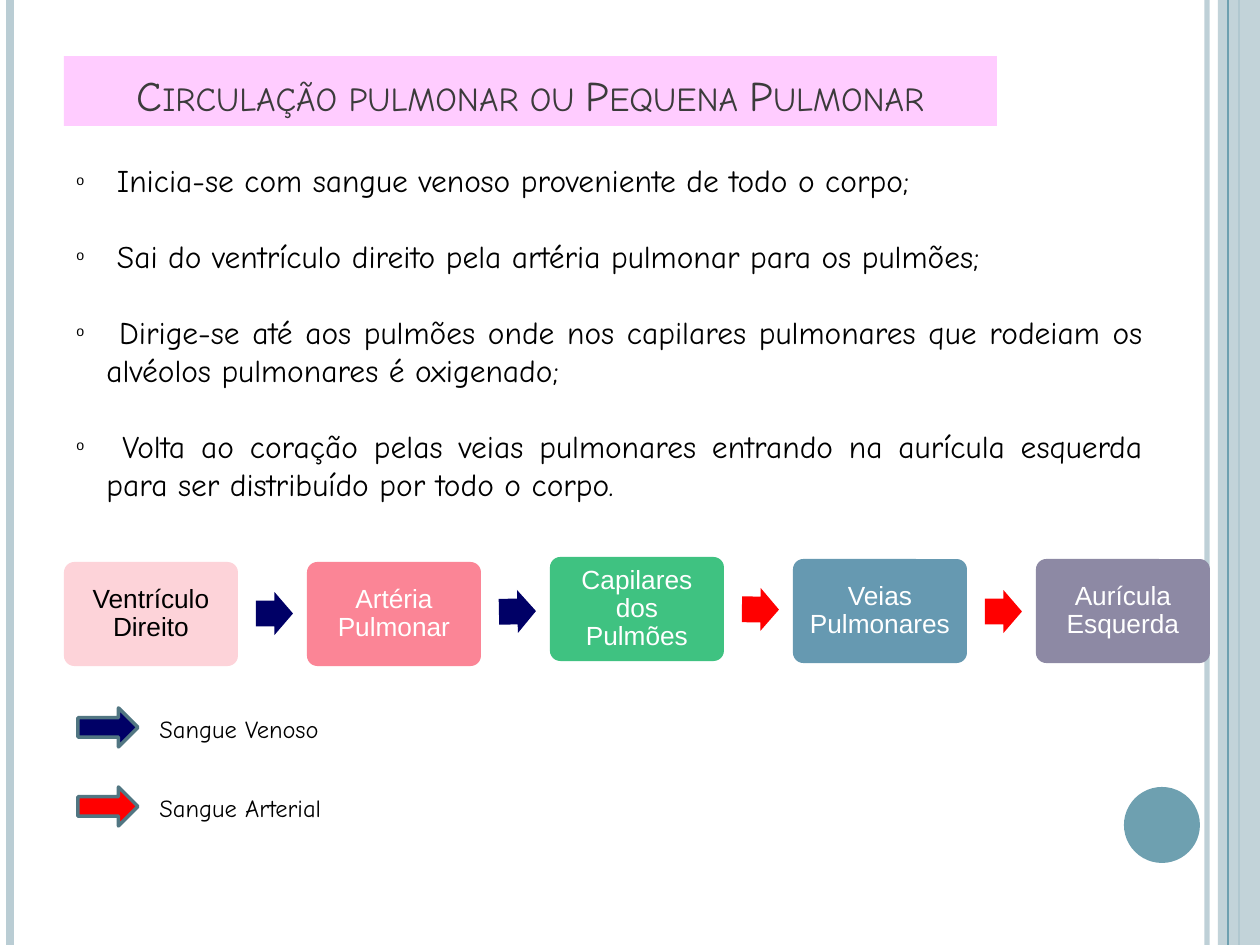
import math
from typing import NamedTuple

import lxml.etree
import pptx
import pptx.dml.color
import pptx.enum.shapes
import pptx.enum.text
import pptx.oxml.ns
import pptx.util

RGBColor = pptx.dml.color.RGBColor
Shapes = pptx.enum.shapes.MSO_SHAPE
Align = pptx.enum.text.PP_ALIGN
Anchor = pptx.enum.text.MSO_ANCHOR

EMU_PER_PX = 914400 / 126
SLIDE_WIDTH, SLIDE_HEIGHT = 1260, 945

BLACK = RGBColor(0x00, 0x00, 0x00)
WHITE = RGBColor(0xFF, 0xFF, 0xFF)
PALE_BLUE = RGBColor(0xBA, 0xCD, 0xD4)
TEAL = RGBColor(0x6E, 0xA0, 0xB0)
DARK_TEAL = RGBColor(0x51, 0x76, 0x82)
TITLE_PINK = RGBColor(0xFF, 0xCC, 0xFF)
TITLE_GRAY = RGBColor(0x3B, 0x3B, 0x3B)
VENOUS = RGBColor(0x00, 0x00, 0x66)
ARTERIAL = RGBColor(0xFF, 0x00, 0x00)
LIGHT_ROSE = RGBColor(0xFD, 0xD3, 0xD9)
ROSE = RGBColor(0xFB, 0x85, 0x96)
GREEN = RGBColor(0x3F, 0xC2, 0x81)
BLUE = RGBColor(0x66, 0x99, 0xB1)
PURPLE = RGBColor(0x8D, 0x89, 0xA4)

HAND_FONT, PLAIN_FONT = "Comic Neue", "Arial"


class Box(NamedTuple):
    left: int
    top: int
    width: int
    height: int


class Stage(NamedTuple):
    label: str
    top: int
    fill: RGBColor
    text_color: RGBColor = WHITE


class LegendEntry(NamedTuple):
    label: str
    arrow_top: int
    color: RGBColor


STAGES = [
    Stage("Ventrículo Direito", 562, LIGHT_ROSE, BLACK),
    Stage("Artéria Pulmonar", 562, ROSE),
    Stage("Capilares dos Pulmões", 557, GREEN),
    Stage("Veias Pulmonares", 559, BLUE),
    Stage("Aurícula Esquerda", 559, PURPLE),
]
FLOW_COLORS = [VENOUS, VENOUS, ARTERIAL, ARTERIAL]
STAGE_LEFT, STAGE_STEP, STAGE_WIDTH, STAGE_HEIGHT = 64, 243, 174, 104
FLOW_WIDTH, FLOW_HEIGHT = 37, 43

LEGEND = [
    LegendEntry("Sangue Venoso", 708, VENOUS),
    LegendEntry("Sangue Arterial", 787, ARTERIAL),
]
BULLETS = [
    " Inicia-se com sangue venoso proveniente de todo o corpo;",
    " Sai do ventrículo direito pela artéria pulmonar para os pulmões;",
    " Dirige-se até aos pulmões onde nos capilares pulmonares que rodeiam os "
    "alvéolos pulmonares é oxigenado;",
    " Volta ao coração pelas veias pulmonares entrando na aurícula esquerda "
    "para ser distribuído por todo o corpo.",
]


def px(length: float) -> pptx.util.Emu:
    return pptx.util.Emu(round(length * EMU_PER_PX))


def add_child(parent, tag: str, **attributes: str):
    return lxml.etree.SubElement(parent, pptx.oxml.ns.qn(tag), attributes)


def set_opacity(shape, percent: int) -> None:
    """Make the first solid colour of the shape, fill or line, translucent."""
    color = next(shape._element.spPr.iter(pptx.oxml.ns.qn("a:srgbClr")))
    add_child(color, "a:alpha", val=str(percent * 1000))


def format_runs(paragraph, font_name: str, size: int, color: RGBColor) -> None:
    for run in paragraph.runs:
        run.font.name = font_name
        run.font.size = pptx.util.Pt(size)
        run.font.color.rgb = color


def add_vertical_line(slide, x: int, color: RGBColor, width: float):
    line = slide.shapes.add_connector(
        pptx.enum.shapes.MSO_CONNECTOR.STRAIGHT, px(x), 0, px(x), px(SLIDE_HEIGHT))
    line.line.color.rgb = color
    line.line.width = pptx.util.Pt(width)
    add_child(line._element.spPr, "a:effectLst")
    return line


def add_filled_shape(slide, kind, box: Box, fill: RGBColor):
    shape = slide.shapes.add_shape(kind, *map(px, box))
    shape.shadow.inherit = False
    shape.fill.solid()
    shape.fill.fore_color.rgb = fill
    shape.line.fill.background()
    return shape


def add_text_box(slide, box: Box):
    text_frame = slide.shapes.add_textbox(*map(px, box)).text_frame
    text_frame.word_wrap = True
    return text_frame


def add_frame_decoration(slide) -> None:
    set_opacity(add_vertical_line(slide, 1207, PALE_BLUE, 3), 93)
    add_vertical_line(slide, 10, PALE_BLUE, 4.5)
    add_vertical_line(slide, 1239, TEAL, 1.5)
    band = add_filled_shape(
        slide, Shapes.RECTANGLE, Box(1218, 0, 42, SLIDE_HEIGHT), PALE_BLUE)
    set_opacity(band, 87)
    add_vertical_line(slide, 1228, TEAL, 0.75)
    add_filled_shape(slide, Shapes.OVAL, Box(1124, 787, 76, 76), TEAL)


def format_title(title) -> None:
    title.left, title.top, title.width, title.height = map(px, Box(64, 56, 933, 70))
    title.fill.solid()
    title.fill.fore_color.rgb = TITLE_PINK
    text_frame = title.text_frame
    text_frame.text = "Circulação pulmonar ou Pequena Pulmonar"
    text_frame.vertical_anchor = Anchor.BOTTOM
    paragraph = text_frame.paragraphs[0]
    paragraph.alignment = Align.CENTER
    format_runs(paragraph, HAND_FONT, 24, TITLE_GRAY)
    paragraph.runs[0].font._element.set("cap", "small")


def add_bullets(slide) -> None:
    text_frame = add_text_box(slide, Box(64, 155, 1091, 357))
    text_frame.text = "\n".join(BULLETS)
    for paragraph in text_frame.paragraphs:
        paragraph.alignment = Align.JUSTIFY
        paragraph.space_after = pptx.util.Pt(21.8)
        format_runs(paragraph, HAND_FONT, 18, BLACK)
        properties = paragraph._element.get_or_add_pPr()
        properties.set("marL", str(px(30)))
        properties.set("indent", str(px(-30)))
        add_child(properties, "a:buSzPct", val="45000")
        add_child(properties, "a:buFont", typeface=PLAIN_FONT)
        add_child(properties, "a:buChar", char="o")


def add_stage(slide, stage: Stage, left: int) -> None:
    box = Box(left, stage.top, STAGE_WIDTH, STAGE_HEIGHT)
    shape = add_filled_shape(slide, Shapes.ROUNDED_RECTANGLE, box, stage.fill)
    shape.adjustments[0] = 0.1
    text_frame = shape.text_frame
    text_frame.text = stage.label
    text_frame.word_wrap = True
    text_frame.vertical_anchor = Anchor.MIDDLE
    text_frame.margin_left = text_frame.margin_right = px(10)
    text_frame.margin_top = text_frame.margin_bottom = px(10)
    paragraph = text_frame.paragraphs[0]
    paragraph.alignment = Align.CENTER
    paragraph.line_spacing = 0.9
    format_runs(paragraph, PLAIN_FONT, 15, stage.text_color)


def add_flow_arrow(slide, left: int, start: Stage, end: Stage, color: RGBColor) -> None:
    """Point an arrow along the line between the centres of two stages."""
    top = round((start.top + end.top + STAGE_HEIGHT - FLOW_HEIGHT) / 2
                + (STAGE_HEIGHT - FLOW_HEIGHT) / 2
                - (STAGE_HEIGHT - FLOW_HEIGHT) / 2)
    arrow = add_filled_shape(
        slide, Shapes.RIGHT_ARROW, Box(left, top, FLOW_WIDTH, FLOW_HEIGHT), color)
    arrow.adjustments[0] = 0.6
    arrow.rotation = math.degrees(math.atan2(end.top - start.top, STAGE_STEP))


def add_flow(slide) -> None:
    for index, stage in enumerate(STAGES):
        add_stage(slide, stage, STAGE_LEFT + index * STAGE_STEP)
    for index, color in enumerate(FLOW_COLORS):
        left = STAGE_LEFT + index * STAGE_STEP + STAGE_WIDTH + 18
        add_flow_arrow(slide, left, STAGES[index], STAGES[index + 1], color)


def add_legend_entry(slide, entry: LegendEntry) -> None:
    arrow = add_filled_shape(
        slide, Shapes.RIGHT_ARROW, Box(78, entry.arrow_top, 60, 39), entry.color)
    arrow.line.color.rgb = DARK_TEAL
    arrow.line.width = pptx.util.Pt(2)
    text_frame = add_text_box(slide, Box(147, entry.arrow_top, 266, 43))
    text_frame.text = entry.label
    format_runs(text_frame.paragraphs[0], HAND_FONT, 14, BLACK)


def main() -> None:
    presentation = pptx.Presentation()
    presentation.slide_width, presentation.slide_height = px(SLIDE_WIDTH), px(SLIDE_HEIGHT)
    slide = presentation.slides.add_slide(presentation.slide_layouts[5])
    add_frame_decoration(slide)
    format_title(slide.shapes.title)
    add_flow(slide)
    for entry in LEGEND:
        add_legend_entry(slide, entry)
    add_bullets(slide)
    presentation.save("out.pptx")


if __name__ == "__main__":
    main()
